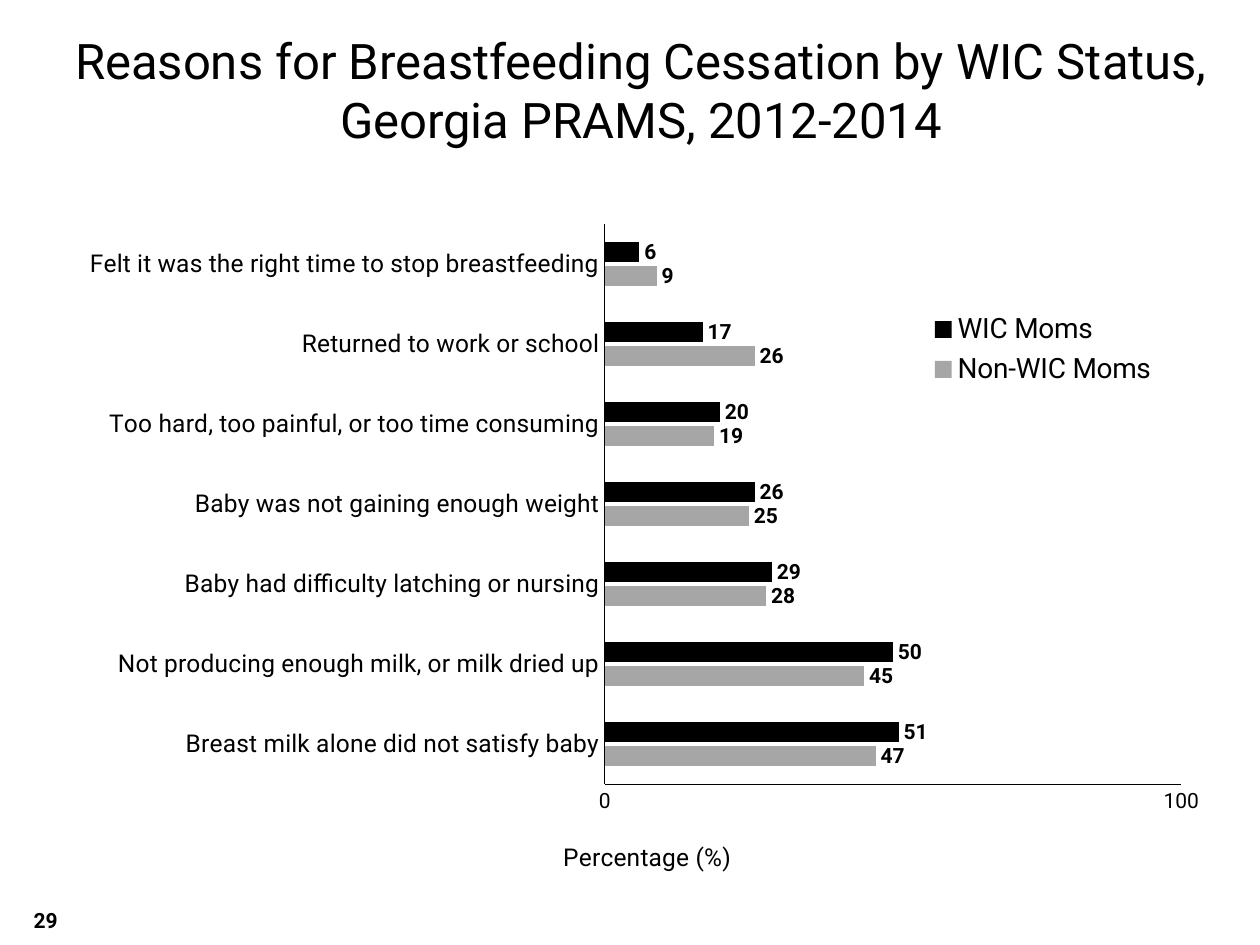
from lxml import etree
from pptx import Presentation
from pptx.chart.data import CategoryChartData
from pptx.dml.color import RGBColor
from pptx.enum.chart import XL_CHART_TYPE, XL_LABEL_POSITION, XL_LEGEND_POSITION, XL_TICK_MARK
from pptx.enum.text import MSO_ANCHOR, PP_ALIGN
from pptx.oxml.ns import qn
from pptx.util import Cm, Pt

BAR = XL_CHART_TYPE.BAR_CLUSTERED
OUTSIDE_END = XL_LABEL_POSITION.OUTSIDE_END
LEGEND_TOP = XL_LEGEND_POSITION.TOP
NO_TICK = XL_TICK_MARK.NONE
MIDDLE = MSO_ANCHOR.MIDDLE
LEFT, CENTER = PP_ALIGN.LEFT, PP_ALIGN.CENTER

FONT = "Roboto"
COLORS = {"text": "000000", "WIC Moms": "000000", "Non-WIC Moms": "A6A6A6"}

# Reason, non-WIC %, WIC %, listed from the bottom of the axis upwards
REASONS = [
    ("Breast milk alone did not satisfy baby", 47, 51),
    ("Not producing enough milk, or milk dried up", 45, 50),
    ("Baby had difficulty latching or nursing", 28, 29),
    ("Baby was not gaining enough weight", 25, 26),
    ("Too hard, too painful, or too time consuming", 19, 20),
    ("Returned to work or school", 26, 17),
    ("Felt it was the right time to stop breastfeeding", 9, 6),
]


def rgb(name):
    return RGBColor.from_string(COLORS[name])


def set_layout(chart, tag, index, inner=False, **fractions):
    """Place the chart part with this tag by fractions of the chart area."""
    parent = next(chart.element.iter(qn(tag)))
    for old in parent.findall(qn("c:layout")):
        parent.remove(old)
    layout = etree.Element(qn("c:layout"))
    manual = etree.SubElement(layout, qn("c:manualLayout"))
    if inner:
        etree.SubElement(manual, qn("c:layoutTarget")).set("val", "inner")
    for mode in ("xMode", "yMode"):
        etree.SubElement(manual, qn(f"c:{mode}")).set("val", "edge")
    for side, value in fractions.items():
        etree.SubElement(manual, qn(f"c:{side}")).set("val", str(value))
    parent.insert(index, layout)


class SlideBuilder:
    def __init__(self, slide):
        self.s = slide

    def style(self, font, size, bold=False):
        font.name, font.size, font.bold = FONT, Pt(size), bold
        font.color.rgb = rgb("text")

    def text(self, text, x, y, w, h, size, align=LEFT, bold=False):
        tf = self.s.shapes.add_textbox(Cm(x), Cm(y), Cm(w), Cm(h)).text_frame
        tf.word_wrap = True
        tf.vertical_anchor = MIDDLE
        p = tf.paragraphs[0]
        p.text, p.alignment = text, align
        self.style(p.font, size, bold)

    def axis(self, axis, size):
        axis.has_major_gridlines = False
        axis.major_tick_mark = axis.minor_tick_mark = NO_TICK
        axis.format.line.color.rgb = rgb("text")
        axis.format.line.width = Pt(0.75)
        self.style(axis.tick_labels.font, size)

    def bar_chart(self, x, y, w, h, axis_title):
        data = CategoryChartData(number_format="0")
        data.categories, non_wic, wic = zip(*REASONS)
        data.add_series("Non-WIC Moms", non_wic)
        data.add_series("WIC Moms", wic)
        chart = self.s.shapes.add_chart(BAR, Cm(x), Cm(y), Cm(w), Cm(h), data).chart
        chart.has_title = False
        self.style(chart.font, 10)

        # Bars and value labels
        plot = chart.plots[0]
        plot.gap_width, plot.overlap, plot.vary_by_categories = 182, -20, False
        for series in plot.series:
            series.format.fill.solid()
            series.format.fill.fore_color.rgb = rgb(series.name)
            labels = series.data_labels
            labels.show_value = True
            labels.number_format, labels.number_format_is_linked = "0", False
            labels.position = OUTSIDE_END
            self.style(labels.font, 12, bold=True)

        # Axes
        self.axis(chart.category_axis, 14)
        value_axis = chart.value_axis
        self.axis(value_axis, 12)
        value_axis.minimum_scale, value_axis.maximum_scale = 0, 100
        value_axis.major_unit = 100
        value_axis.tick_labels.number_format = "0"
        value_axis.tick_labels.number_format_is_linked = False
        p = value_axis.axis_title.text_frame.paragraphs[0]
        p.text = axis_title
        self.style(p.font, 14)

        # Legend
        chart.has_legend = True
        legend = chart.legend
        legend.position, legend.include_in_layout = LEGEND_TOP, False
        self.style(legend.font, 16)

        # Placement inside the chart area
        set_layout(chart, "c:plotArea", 0, inner=True, x=0.47, y=0.09, w=0.5, h=0.76)
        set_layout(chart, "c:title", 1, x=0.43, y=0.92)
        set_layout(chart, "c:legend", 1, x=0.72, y=0.2, w=0.26, h=0.12)


def main():
    prs = Presentation()
    prs.slide_width, prs.slide_height = Cm(25.4), Cm(19.05)
    b = SlideBuilder(prs.slides.add_slide(prs.slide_layouts[6]))

    # Title
    b.text("Reasons for Breastfeeding Cessation by WIC Status, Georgia PRAMS, 2012-2014",
           0.64, 0.43, 24.56, 2.74, 28, CENTER)
    # Page number
    b.text("29", 0.43, 18.03, 5.92, 1.02, 12, bold=True)
    # Reasons by WIC status
    b.bar_chart(1.27, 3.18, 23.24, 14.86, "Percentage (%)")

    prs.save("out.pptx")


if __name__ == "__main__":
    main()
